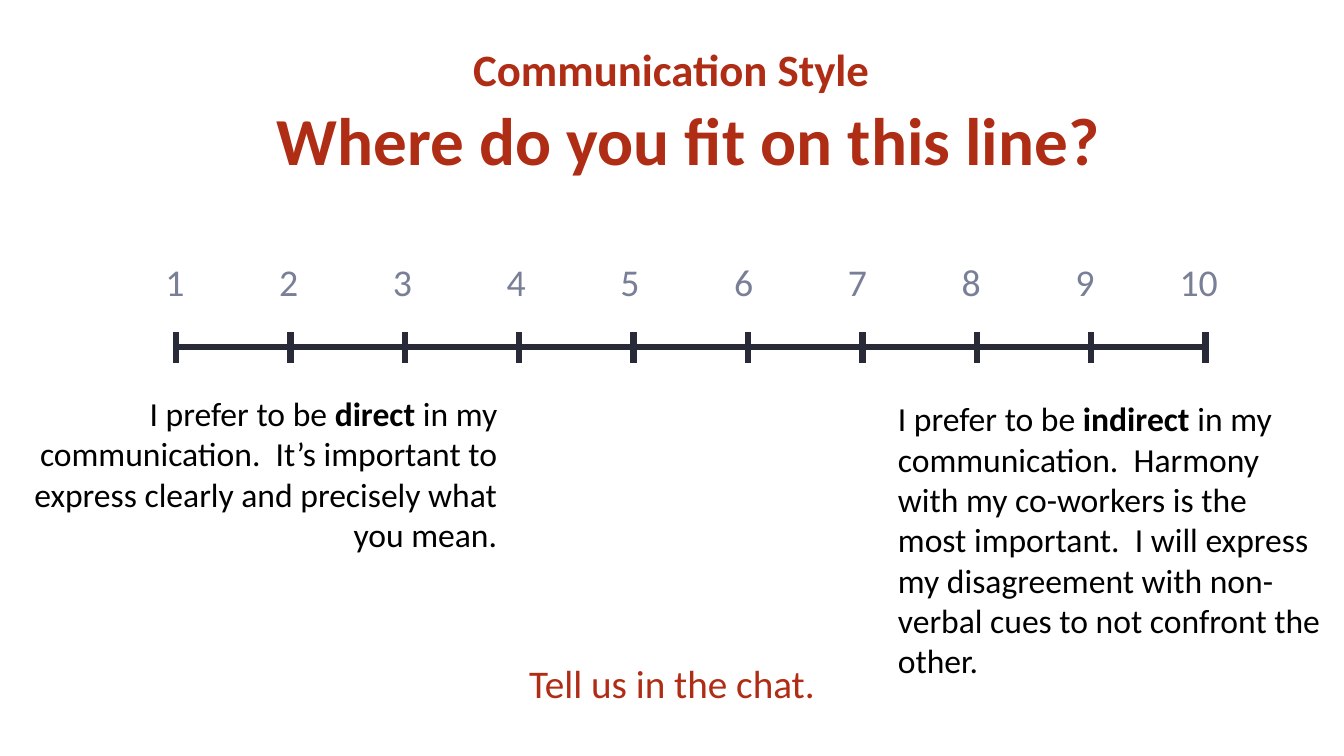
from lxml import etree
from pptx import Presentation
from pptx.dml.color import RGBColor
from pptx.enum.shapes import MSO_CONNECTOR
from pptx.enum.text import MSO_ANCHOR, MSO_AUTO_SIZE, PP_ALIGN
from pptx.oxml.ns import qn
from pptx.util import Cm, Pt

STRAIGHT = MSO_CONNECTOR.STRAIGHT
TOP, MIDDLE = MSO_ANCHOR.TOP, MSO_ANCHOR.MIDDLE
NO_FIT = MSO_AUTO_SIZE.NONE
LEFT, CENTER, RIGHT = PP_ALIGN.LEFT, PP_ALIGN.CENTER, PP_ALIGN.RIGHT
RED, INK, SLATE, BLACK = "B02D15", "292A38", "797F96", "000000"
FONT = "Calibri"
POINTS = 10


def rgb(code):
    """Turn a hex string into a colour."""
    return RGBColor.from_string(code)


def write(frame, parts, size, color, align, bold=None, spacing=None, anchor=TOP, wrap=True):
    """Fill a text frame with one paragraph of (text, bold) parts."""
    frame.word_wrap = wrap
    frame.auto_size = NO_FIT
    frame.vertical_anchor = anchor
    paragraph = frame.paragraphs[0]
    paragraph.alignment = align
    paragraph.line_spacing = spacing
    font = paragraph.font
    font.name, font.size, font.bold = FONT, Pt(size), bold
    font.color.rgb = rgb(color)
    for text, emphasis in parts:
        run = paragraph.add_run()
        run.text = text
        if emphasis:
            run.font.bold = True


def add_words(slide, box, parts, size, color, align, **options):
    """Add a text box at a box given in centimetres."""
    words = slide.shapes.add_textbox(*map(Cm, box))
    write(words.text_frame, parts, size, color, align, **options)


def add_heading(slide, box):
    """Place the topic above the question."""
    left, top, width, height = box
    add_words(slide, (left, top, width, 2.77), [("Communication Style", False)],
              32, RED, CENTER, bold=True, spacing=0.9, anchor=MIDDLE)
    question = slide.shapes.title
    question.left, question.top = Cm(left + 0.43), Cm(top + 2.14)
    question.width, question.height = Cm(width), Cm(height - 2.14)
    write(question.text_frame, [("Where do you fit on this line?", False)],
          48, RED, CENTER, bold=True, spacing=0.9)


def add_rule(group, start, end):
    """Draw one thick line of the scale."""
    rule = group.shapes.add_connector(STRAIGHT, *map(Cm, start + end))
    rule.line.color.rgb = rgb(INK)
    rule.line.width = Pt(4.5)
    etree.SubElement(rule._element.spPr, qn("a:effectLst"))


def add_scale(slide, box):
    """Draw the axis with a tick and a number for each point."""
    left, top, width, height = box
    axis, bottom = top + 2.34, top + height
    tick_step, number_step = width / (POINTS - 1), (width - 0.14) / (POINTS - 1)
    scale = slide.shapes.add_group_shape()
    add_rule(scale, (left - 0.05, axis), (left + width - 0.08, axis))
    for index in range(POINTS):
        tick = left + index * tick_step
        add_rule(scale, (tick, bottom), (tick, bottom - 0.78))
        number = left - 0.78 + index * number_step
        add_words(slide, (number, top, 1.5, 1.42), [(str(index + 1), False)],
                  27, SLATE, CENTER, wrap=False)


def add_preference(slide, box, align, style, reason):
    """Describe the style at one end of the scale."""
    parts = [("I prefer to be ", False), (style, True), (f" in my communication.  {reason}", False)]
    add_words(slide, box, parts, 24, BLACK, align)


def add_prompt(slide, box):
    """Ask the audience to answer."""
    add_words(slide, box, [("Tell us in the chat.", False)], 28, RED, CENTER)


def main():
    """Build and save the slide."""
    deck = Presentation()
    deck.slide_width, deck.slide_height = Cm(33.87), Cm(19.05)
    slide = deck.slides.add_slide(deck.slide_layouts[5])
    add_heading(slide, (4.22, 0.43, 25.4, 5.39))
    add_scale(slide, (4.44, 6.4, 25.94, 2.74))
    add_preference(slide, (0.28, 9.78, 12.5, 4.37), RIGHT, "direct",
                   "It’s important to express clearly and precisely what you mean.")
    add_preference(slide, (22.38, 9.91, 11.2, 7.44), LEFT, "indirect",
                   "Harmony with my co-workers is the most important.  I will express "
                   "my disagreement with non-verbal cues to not confront the other.")
    add_prompt(slide, (0, 16.48, 33.87, 1.45))
    deck.save("out.pptx")


if __name__ == "__main__":
    main()
